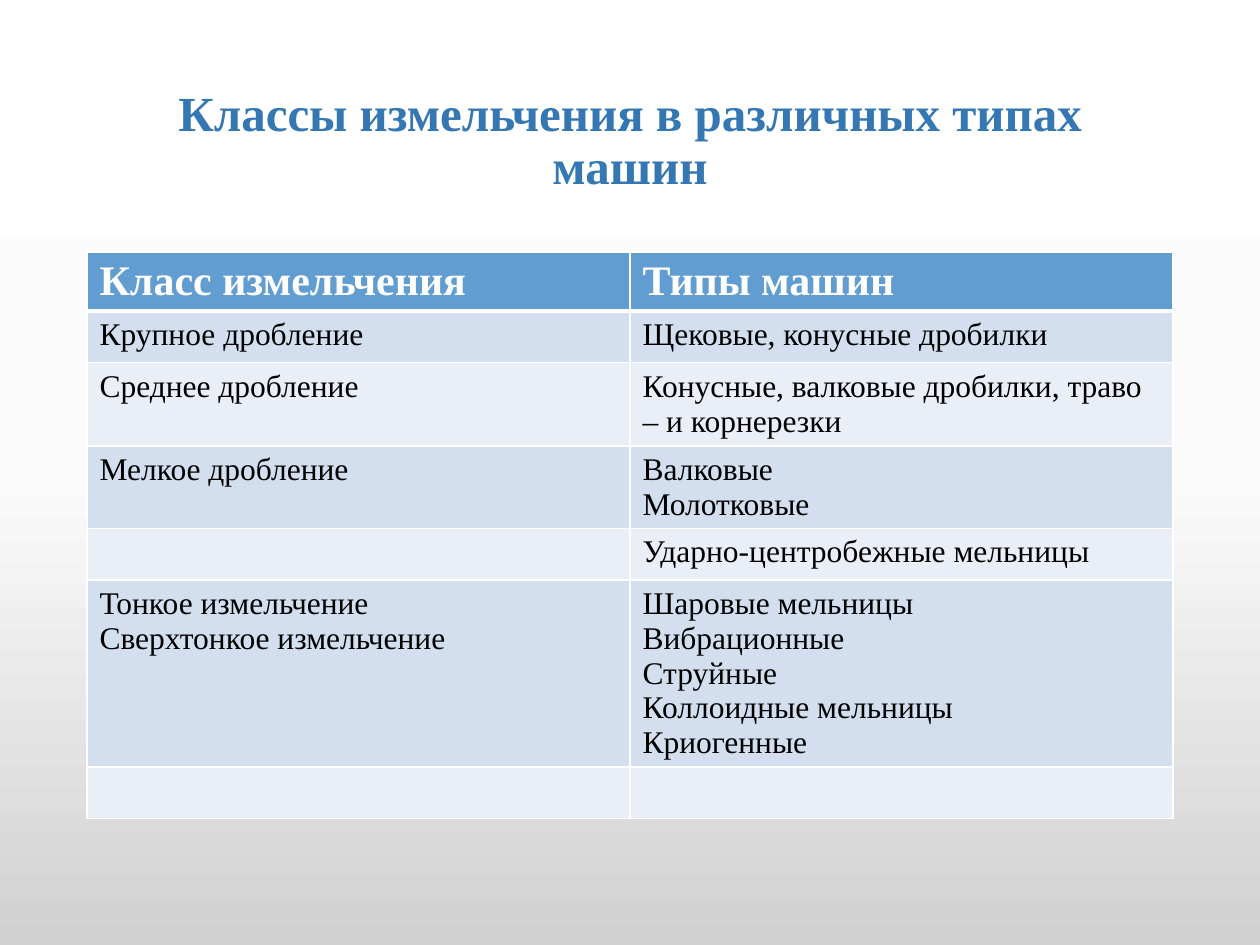
import copy

import pptx
import pptx.dml.color
import pptx.enum.text
import pptx.oxml
import pptx.oxml.ns
import pptx.util
from pptx.util import Inches

FONT = "Times New Roman"
COLORS = {
    "title": "3477B2",
    "header": "629DD1",
    "odd row": "D3DFEE",
    "even row": "EAEFF7",
    "white": "FFFFFF",
    "black": "000000",
}
BACKGROUND_STOPS = [(0, "FFFFFF"), (0.5, "FBFBFB"), (1, "D1D1D1")]

# Each row: height, lines of the class cell, lines of the machine cell
ROWS = [
    (0.46, ["Класс измельчения"], ["Типы машин"]),
    (0.41, ["Крупное дробление"], ["Щековые, конусные дробилки"]),
    (0.66, ["Среднее дробление"],
     ["Конусные, валковые дробилки, траво – и корнерезки"]),
    (0.65, ["Мелкое дробление"], ["Валковые", "Молотковые"]),
    (0.41, [], ["Ударно-центробежные мельницы"]),
    (1.48, ["Тонкое измельчение", "Сверхтонкое измельчение"],
     ["Шаровые мельницы", "Вибрационные", "Струйные",
      "Коллоидные мельницы", "Криогенные"]),
    (0.41, [], []),
]


def add_run(paragraph, text, size, color, bold):
    run = paragraph.add_run()
    run.text = text
    run.font.name = FONT
    run.font.size = pptx.util.Pt(size)
    run.font.bold = bold
    run.font.color.rgb = pptx.dml.color.RGBColor.from_string(color)


def set_borders(cell, bottom_width):
    properties = cell._tc.get_or_add_tcPr()
    widths = {"lnL": 1, "lnR": 1, "lnT": 1, "lnB": bottom_width}
    for position, (side, width) in enumerate(widths.items()):
        properties.insert(position, pptx.oxml.parse_xml(
            f'<a:{side} {pptx.oxml.ns.nsdecls("a")} w="{pptx.util.Pt(width)}">'
            f'<a:solidFill><a:srgbClr val="{COLORS["white"]}"/></a:solidFill>'
            f'</a:{side}>'))


presentation = pptx.Presentation()
presentation.slide_width = Inches(10)
presentation.slide_height = Inches(7.5)
slide = presentation.slides.add_slide(presentation.slide_layouts[5])

# Background: three-stop gradient from top to bottom
background = slide.background.fill
background.gradient()
background.gradient_angle = 270
stop_list = slide.element.xpath(".//a:gsLst")[0]
stop_list.append(copy.deepcopy(stop_list[0]))
for stop, (position, color) in zip(background.gradient_stops, BACKGROUND_STOPS):
    stop.position = position
    stop.color.rgb = pptx.dml.color.RGBColor.from_string(color)

# Title
title = slide.shapes.title
title.left, title.top = Inches(0.69), Inches(0.4)
title.width, title.height = Inches(8.62), Inches(1.45)
title.text_frame.word_wrap = True
title.text_frame.vertical_anchor = pptx.enum.text.MSO_ANCHOR.MIDDLE
paragraph = title.text_frame.paragraphs[0]
paragraph.alignment = pptx.enum.text.PP_ALIGN.CENTER
paragraph.line_spacing = 0.9
add_run(paragraph, "Классы измельчения в различных типах машин",
        28, COLORS["title"], True)

# Table of grinding classes and machines
table_height = sum(height for height, *_ in ROWS)
table = slide.shapes.add_table(
    len(ROWS), 2, Inches(0.69), Inches(2), Inches(8.62),
    Inches(table_height)).table
for row_index, (height, *row_cells) in enumerate(ROWS):
    table.rows[row_index].height = Inches(height)
    is_header = row_index == 0
    if is_header:
        fill, size, color = COLORS["header"], 24, COLORS["white"]
    else:
        fill = COLORS["odd row" if row_index % 2 else "even row"]
        size, color = 18, COLORS["black"]
    for column_index, lines in enumerate(row_cells):
        cell = table.cell(row_index, column_index)
        cell.fill.solid()
        cell.fill.fore_color.rgb = pptx.dml.color.RGBColor.from_string(fill)
        set_borders(cell, 3 if is_header else 1)
        for line_index, line in enumerate(lines):
            frame = cell.text_frame
            paragraph = frame.add_paragraph() if line_index else frame.paragraphs[0]
            add_run(paragraph, line, size, color, is_header)

presentation.save("out.pptx")
